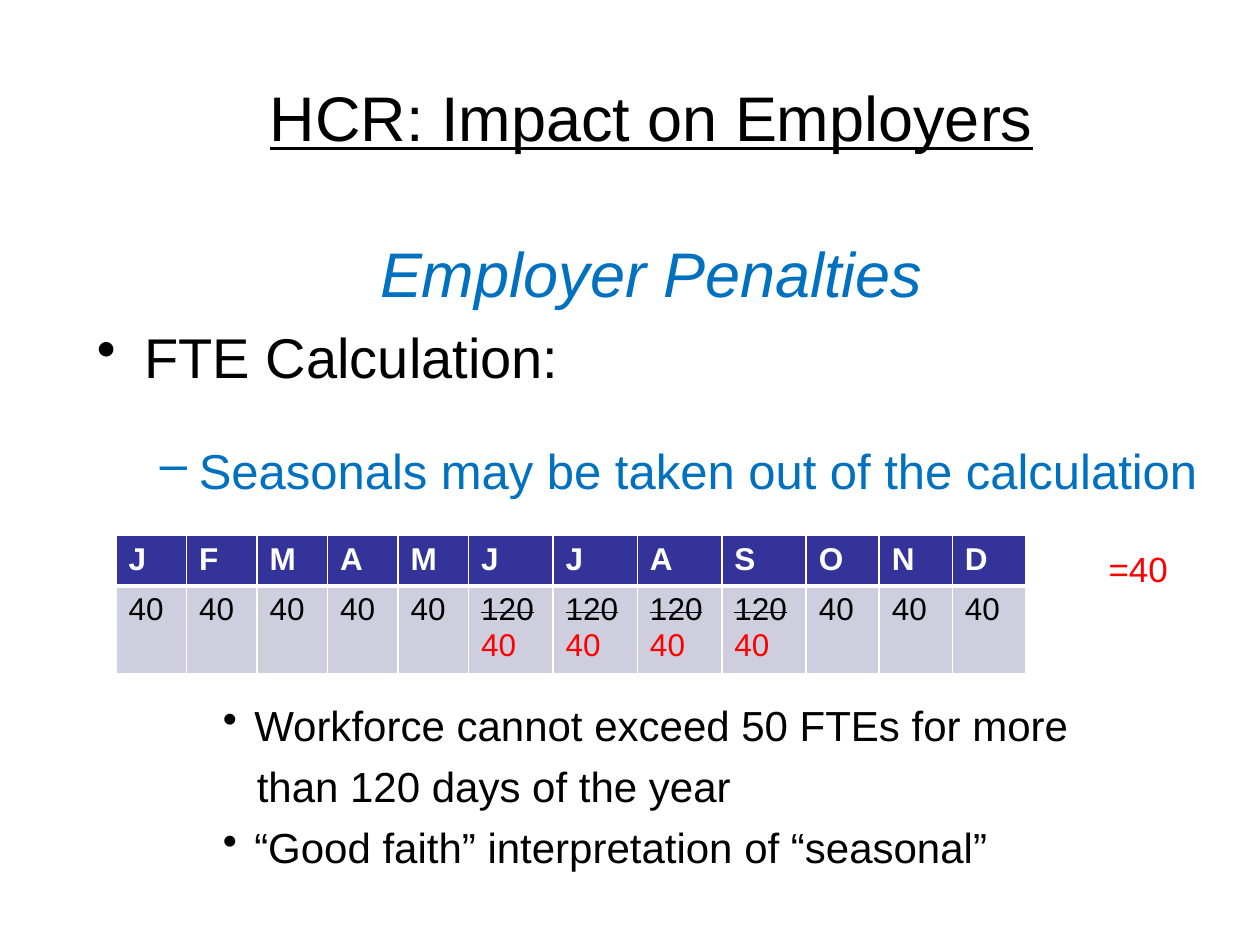
from dataclasses import dataclass
from typing import Optional

from lxml import etree
from pptx import Presentation
from pptx.dml.color import RGBColor
from pptx.enum.text import MSO_ANCHOR, PP_ALIGN
from pptx.oxml.ns import qn
from pptx.util import Inches, Pt

CENTER, LEFT = PP_ALIGN.CENTER, PP_ALIGN.LEFT
MIDDLE, TOP = MSO_ANCHOR.MIDDLE, MSO_ANCHOR.TOP
TITLE_ONLY = 5


@dataclass(frozen=True)
class Theme:
    font: str = "Arial"
    black: str = "000000"
    white: str = "FFFFFF"
    blue: str = "0070C0"
    red: str = "FF0000"
    header_fill: str = "333399"
    body_fill: str = "CECEDE"
    title_size: int = 36
    topic_size: int = 32
    point_size: int = 28
    detail_size: int = 24
    result_size: int = 20
    table_size: int = 18


THEME = Theme()


@dataclass(frozen=True)
class Line:
    text: str
    size: int
    color: str = THEME.black
    italic: bool = False
    bold: bool = False
    underline: bool = False
    strike: bool = False
    align: PP_ALIGN = LEFT
    bullet: Optional[str] = None
    margin: float = 0
    hanging: float = 0
    space_before: float = 0


@dataclass(frozen=True)
class Month:
    initial: str
    width: float
    count: str = "40"
    adjusted: Optional[str] = None


def write_lines(frame, lines: list[Line]) -> None:
    for index, line in enumerate(lines):
        paragraph = frame.paragraphs[0] if index == 0 else frame.add_paragraph()
        properties = paragraph._p.get_or_add_pPr()
        properties.set("marL", str(Inches(line.margin)))
        properties.set("indent", str(-Inches(line.hanging)))
        paragraph.space_before = Pt(line.space_before)
        if line.bullet:
            etree.SubElement(properties, qn("a:buChar"), char=line.bullet)
        else:
            etree.SubElement(properties, qn("a:buNone"))
        paragraph.alignment = line.align
        run = paragraph.add_run()
        run.text = line.text
        font = run.font
        font.name, font.size = THEME.font, Pt(line.size)
        font.color.rgb = RGBColor.from_string(line.color)
        font.bold, font.italic, font.underline = line.bold, line.italic, line.underline
        if line.strike:
            run._r.get_or_add_rPr().set("strike", "sngStrike")


def add_text(slide, left: float, top: float, width: float, height: float,
             lines: list[Line]) -> None:
    box = slide.shapes.add_textbox(Inches(left), Inches(top), Inches(width), Inches(height))
    box.text_frame.word_wrap = True
    write_lines(box.text_frame, lines)


def format_cell(cell, fill: str, thick_side: str, lines: list[Line]) -> None:
    """Give the cell white borders, the one on thick_side heavier, then fill and text."""
    properties = cell._tc.get_or_add_tcPr()
    for side in ("lnL", "lnR", "lnT", "lnB"):
        width = Pt(3 if side == thick_side else 1)
        border = etree.SubElement(properties, qn(f"a:{side}"), w=str(width))
        solid = etree.SubElement(border, qn("a:solidFill"))
        etree.SubElement(solid, qn("a:srgbClr"), val=THEME.white)
    cell.fill.solid()
    cell.fill.fore_color.rgb = RGBColor.from_string(fill)
    cell.vertical_anchor = TOP
    write_lines(cell.text_frame, lines)


def add_month_table(slide, months: list[Month], left: float, top: float) -> None:
    row_heights = (0.38, 0.65)
    width = sum(month.width for month in months)
    table = slide.shapes.add_table(
        len(row_heights), len(months), Inches(left), Inches(top),
        Inches(width), Inches(sum(row_heights))).table
    for row, height in zip(table.rows, row_heights):
        row.height = Inches(height)
    for column, month in enumerate(months):
        table.columns[column].width = Inches(month.width)
        format_cell(table.cell(0, column), THEME.header_fill, "lnB",
                    [Line(month.initial, THEME.table_size, THEME.white, bold=True)])
        counts = [Line(month.count, THEME.table_size, strike=month.adjusted is not None)]
        if month.adjusted:
            counts.append(Line(month.adjusted, THEME.table_size, THEME.red))
        format_cell(table.cell(1, column), THEME.body_fill, "lnT", counts)


def main() -> None:
    presentation = Presentation()
    presentation.slide_width, presentation.slide_height = Inches(10), Inches(7.5)
    slide = presentation.slides.add_slide(presentation.slide_layouts[TITLE_ONLY])

    title = slide.shapes.title
    title.left, title.top = Inches(0.67), Inches(0.3)
    title.width, title.height = Inches(9), Inches(1.25)
    title.text_frame.vertical_anchor = MIDDLE
    write_lines(title.text_frame, [
        Line("HCR: Impact on Employers", THEME.title_size, underline=True, align=CENTER)])

    add_text(slide, 0.67, 1.81, 9, 2.2, [
        Line("Employer Penalties", THEME.title_size, THEME.blue, italic=True, align=CENTER),
        Line("FTE Calculation:", THEME.topic_size, bullet="•",
             margin=0.38, hanging=0.38, space_before=7.4),
        Line("Seasonals may be taken out of the calculation", THEME.point_size, THEME.blue,
             bullet="–", margin=0.81, hanging=0.31, space_before=29),
    ])

    months = [Month(initial, 0.56) for initial in "JFMAM"]
    months += [Month(initial, 0.67, "120", "40") for initial in "JJAS"]
    months += [Month(initial, 0.58) for initial in "OND"]
    add_month_table(slide, months, 0.92, 4.25)
    add_text(slide, 8.7, 4.3, 0.9, 0.4, [Line("=40", THEME.result_size, THEME.red)])

    add_text(slide, 0.67, 5.5, 9, 1.5, [
        Line("Workforce cannot exceed 50 FTEs for more", THEME.detail_size,
             bullet="•", margin=1.25, hanging=0.25),
        Line("than 120 days of the year", THEME.detail_size, margin=1.27, space_before=6),
        Line("“Good faith” interpretation of “seasonal”", THEME.detail_size,
             bullet="•", margin=1.25, hanging=0.25, space_before=6),
    ])
    presentation.save("out.pptx")


if __name__ == "__main__":
    main()
